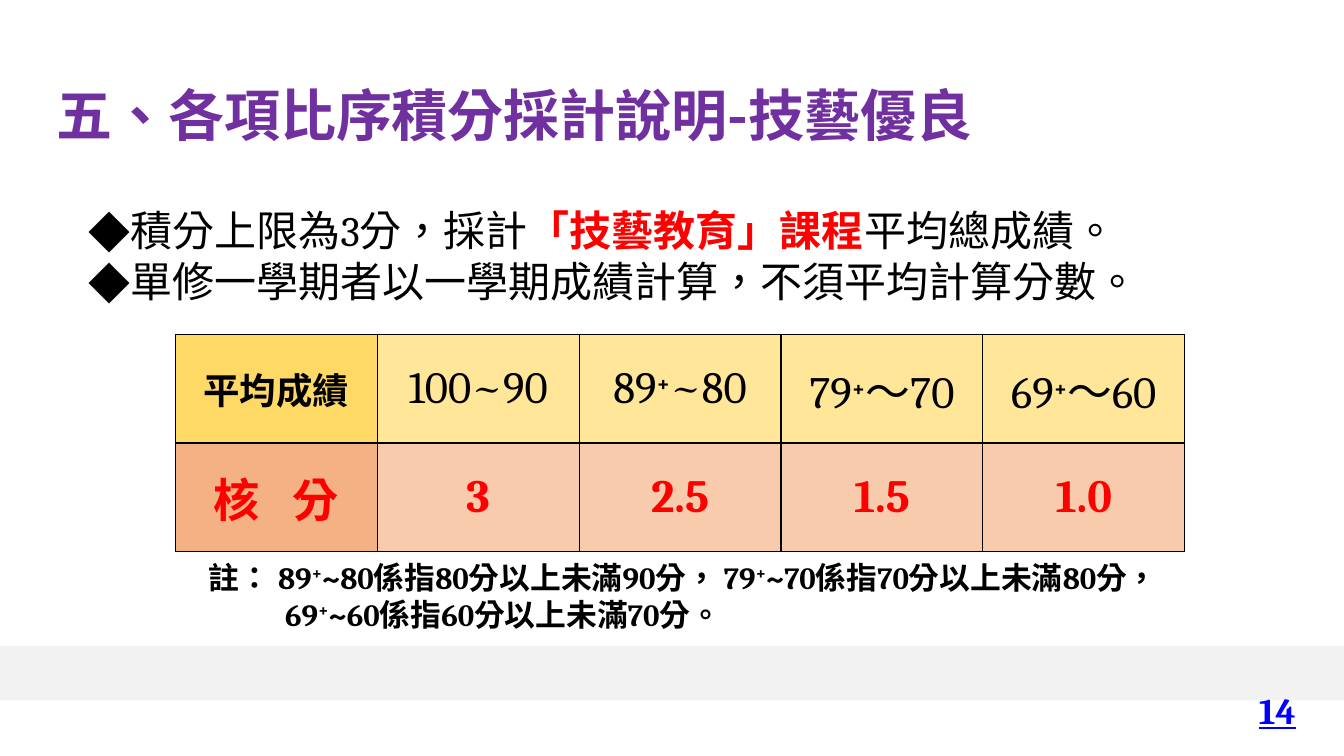
from dataclasses import dataclass

from lxml import etree
from pptx import Presentation
from pptx.dml.color import RGBColor
from pptx.enum.shapes import MSO_SHAPE
from pptx.enum.text import MSO_ANCHOR, PP_ALIGN
from pptx.oxml.ns import qn
from pptx.util import Emu, Pt

RECT = MSO_SHAPE.RECTANGLE
MIDDLE, TOP = MSO_ANCHOR.MIDDLE, MSO_ANCHOR.TOP
LEFT, CENTER, RIGHT = PP_ALIGN.LEFT, PP_ALIGN.CENTER, PP_ALIGN.RIGHT
SANS, SERIF = "Noto Sans CJK SC", "Cambria"
BLACK, RED, BLUE, PURPLE = "000000", "FF0000", "0000FF", "7030A0"
SCALE = 9144


@dataclass(frozen=True)
class Run:
    text: str
    size: int
    color: str = BLACK
    bold: bool = False
    face: str = SERIF
    line: bool = False
    raised: bool = False
    track: int = 0


@dataclass(frozen=True)
class Box:
    left: int
    top: int
    width: int
    height: int


def px(count: int) -> Emu:
    return Emu(count * SCALE)


def paint(hue: str) -> RGBColor:
    return RGBColor.from_string(hue)


def add_runs(para, runs: list[Run]) -> None:
    for item in runs:
        run = para.add_run()
        run.text = item.text
        font = run.font
        font.size, font.bold, font.name = Pt(item.size), item.bold, item.face
        font.color.rgb = paint(item.color)
        font.underline = item.line
        props = run._r.get_or_add_rPr()
        props.set("lang", "zh-TW")
        if item.raised:
            props.set("baseline", "30000")
        if item.track:
            props.set("spc", str(item.track * 100))
        if item.face == SANS:
            etree.SubElement(props, qn("a:ea"), typeface=SANS)


def add_text(slide, box: Box, anchor=TOP):
    shape = slide.shapes.add_textbox(px(box.left), px(box.top), px(box.width), px(box.height))
    frame = shape.text_frame
    frame.word_wrap = True
    frame.vertical_anchor = anchor
    return frame


def indent(para, width: int, mark: str = "") -> None:
    props = para._p.get_or_add_pPr()
    props.set("marL", str(px(width)))
    props.set("indent", str(-px(width)))
    if mark:
        etree.SubElement(props, qn("a:buFont"), typeface=SANS)
        etree.SubElement(props, qn("a:buChar"), char=mark)
    else:
        tabs = etree.SubElement(props, qn("a:tabLst"))
        etree.SubElement(tabs, qn("a:tab"), pos=str(px(width)), algn="l")


def add_edges(cell) -> None:
    props = cell._tc.get_or_add_tcPr()
    for at, side in enumerate(("a:lnL", "a:lnR", "a:lnT", "a:lnB")):
        edge = etree.Element(qn(side), w=str(Pt(1)))
        fill = etree.SubElement(edge, qn("a:solidFill"))
        etree.SubElement(fill, qn("a:srgbClr"), val=BLACK)
        props.insert(at, edge)


def add_grid(slide, box: Box, rows: list[list[list[Run]]], fills: list[tuple[str, str]]) -> None:
    shape = slide.shapes.add_table(
        len(rows), len(rows[0]), px(box.left), px(box.top), px(box.width), px(box.height)
    )
    for y, (row, (head, body)) in enumerate(zip(rows, fills)):
        for x, runs in enumerate(row):
            cell = shape.table.cell(y, x)
            cell.vertical_anchor = MIDDLE
            cell.fill.solid()
            cell.fill.fore_color.rgb = paint(body if x else head)
            add_edges(cell)
            para = cell.text_frame.paragraphs[0]
            para.alignment = CENTER
            add_runs(para, runs)


def score(low: str, rest: str) -> list[Run]:
    return [Run(low, 32), Run("+", 28, bold=True, raised=True), Run(rest, 32)]


def main() -> None:
    deck = Presentation()
    deck.slide_width, deck.slide_height = px(1333), px(750)
    slide = deck.slides.add_slide(deck.slide_layouts[6])

    points = [
        [
            Run("積分上限為", 30, face=SANS),
            Run("3", 30),
            Run("分，採計", 30, face=SANS),
            Run("「技藝教育」課程", 30, RED, True, SANS),
            Run("平均總成績。", 30, face=SANS),
        ],
        [Run("單修一學期者以一學期成績計算，不須平均計算分數。", 30, face=SANS)],
    ]
    frame = add_text(slide, Box(78, 204, 1193, 147))
    for at, runs in enumerate(points):
        para = frame.add_paragraph() if at else frame.paragraphs[0]
        indent(para, 25, "◆")
        para.line_spacing = 0.9
        if at:
            para.space_before = Pt(4)
        add_runs(para, runs)

    para = add_text(slide, Box(46, 45, 1150, 145), MIDDLE).paragraphs[0]
    para.line_spacing = 0.9
    add_runs(para, [Run("五、各項比序積分採計說明-技藝優良", 40, PURPLE, True, SANS)])

    ranges = [
        [Run("平均成績", 26, bold=True, face=SANS)],
        [Run("100~90", 32)],
        score("89", "~80"),
        score("79", "～70"),
        score("69", "～60"),
    ]
    label = [
        Run("核", 33, RED, True, SANS),
        Run(" ", 33, RED, True, SANS, track=16),
        Run("分", 33, RED, True, SANS),
    ]
    marks = [[Run(mark, 33, RED, True)] for mark in ("3", "2.5", "1.5", "1.0")]
    fills = [("FFD966", "FFE699"), ("F4B183", "F8CBAD")]
    add_grid(slide, Box(174, 332, 1001, 215), [ranges, [label, *marks]], fills)

    band = slide.shapes.add_shape(RECT, px(0), px(641), px(1333), px(54))
    band.shadow.inherit = False
    band.fill.solid()
    band.fill.fore_color.rgb = paint("F2F2F2")
    band.line.fill.background()

    para = add_text(slide, Box(995, 684, 300, 40), MIDDLE).paragraphs[0]
    para.alignment = RIGHT
    add_runs(para, [Run("14", 26, BLUE, True, line=True)])

    para = add_text(slide, Box(197, 549, 958, 84)).paragraphs[0]
    para.alignment = LEFT
    indent(para, 69)
    parts = [
        "註：\t89",
        "~80係指80分以上未滿90分， 79",
        "~70係指70分以上未滿80分， 69",
        "~60係指60分以上未滿70分。",
    ]
    for at, part in enumerate(parts):
        if at:
            add_runs(para, [Run("+", 22, bold=True, raised=True)])
        add_runs(para, [Run(part, 22, bold=True)])

    deck.save("out.pptx")


if __name__ == "__main__":
    main()
